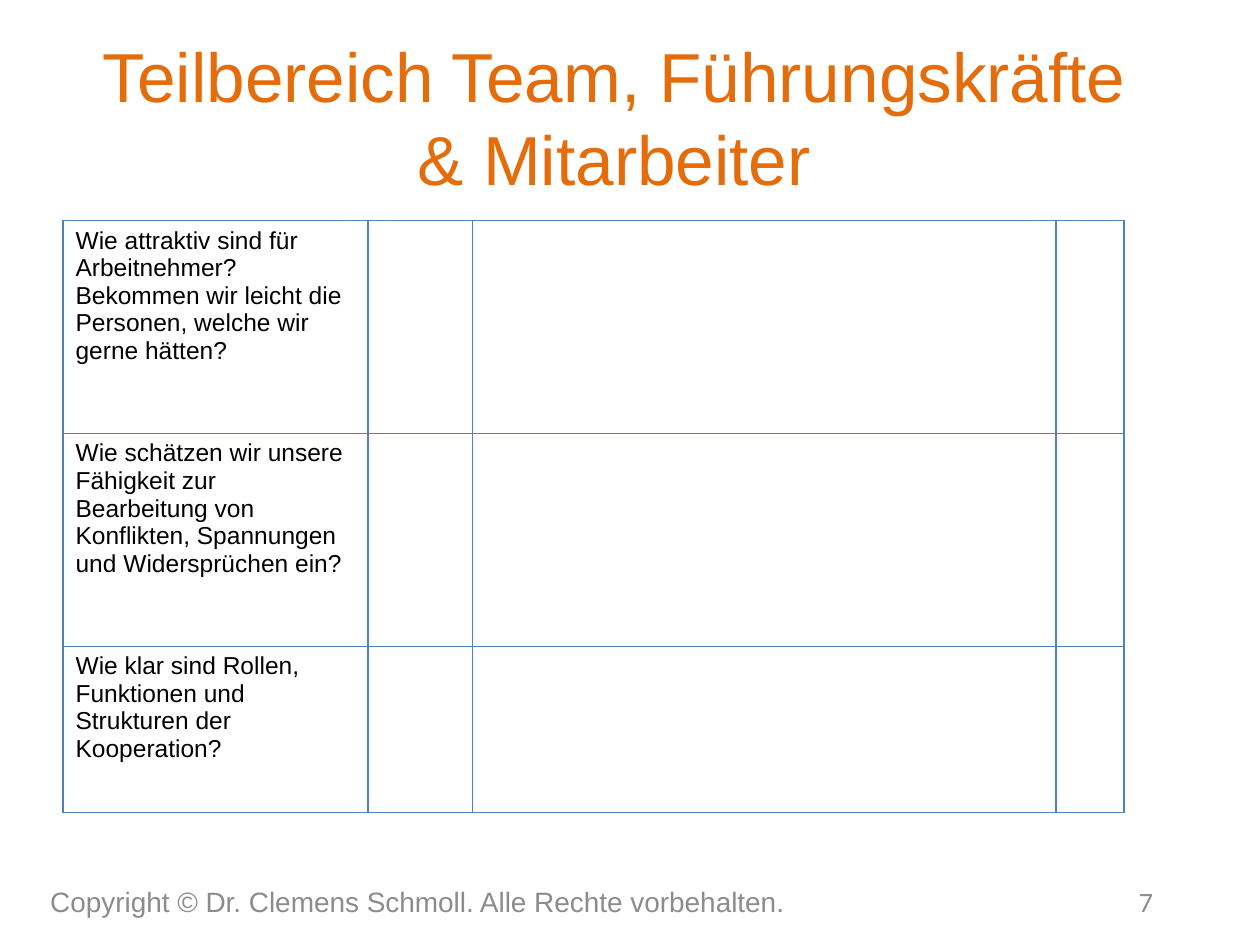
from lxml import etree
from pptx import Presentation
from pptx.dml.color import RGBColor
from pptx.enum.text import MSO_ANCHOR, PP_ALIGN
from pptx.oxml.ns import qn
from pptx.util import Inches, Pt

LEFT, CENTER, RIGHT = PP_ALIGN.LEFT, PP_ALIGN.CENTER, PP_ALIGN.RIGHT
MIDDLE = MSO_ANCHOR.MIDDLE
TITLE_ONLY = 5

COLORS = {"title": "E46C0A", "text": "000000", "footer": "8C8C8C", "border": "4F81BD"}
COLUMN_WIDTHS = [2.42, 0.83, 4.63, 0.54]
ROW_HEIGHTS = [1.69, 1.69, 1.32]
QUESTIONS = [
    "Wie attraktiv sind für Arbeitnehmer? Bekommen wir leicht die Personen, welche wir gerne hätten?",
    "Wie schätzen wir unsere Fähigkeit zur Bearbeitung von Konflikten, Spannungen und Widersprüchen ein?",
    "Wie klar sind Rollen, Funktionen und Strukturen der Kooperation?",
]


def set_text(text_frame, text, size, color, font_name="Arial", alignment=LEFT):
    text_frame.text = text
    text_frame.word_wrap = True
    paragraph = text_frame.paragraphs[0]
    paragraph.alignment = alignment
    font = paragraph.runs[0].font
    font.name = font_name
    font.size = Pt(size)
    font.color.rgb = RGBColor.from_string(COLORS[color])


def add_title(slide, text):
    title = slide.shapes.title
    title.left, title.top = Inches(0.5), Inches(0.3)
    title.width, title.height = Inches(8.75), Inches(1.25)
    set_text(title.text_frame, text, 39.6, "title", alignment=CENTER)
    title.text_frame.vertical_anchor = MIDDLE


def add_footer(slide, text, left, width, font_name, alignment):
    shape = slide.shapes.add_textbox(Inches(left), Inches(6.95), Inches(width), Inches(0.4))
    set_text(shape.text_frame, text, 16, "footer", font_name, alignment)
    shape.text_frame.vertical_anchor = MIDDLE


def set_borders(cell):
    properties = cell._tc.get_or_add_tcPr()
    for position, side in enumerate(("a:lnL", "a:lnR", "a:lnT", "a:lnB")):
        line = etree.Element(qn(side), w=str(Pt(1)))
        fill = etree.SubElement(line, qn("a:solidFill"))
        etree.SubElement(fill, qn("a:srgbClr"), val=COLORS["border"])
        properties.insert(position, line)


def add_question_table(slide):
    frame = slide.shapes.add_table(
        len(ROW_HEIGHTS), len(COLUMN_WIDTHS), Inches(0.5), Inches(1.75),
        Inches(sum(COLUMN_WIDTHS)), Inches(sum(ROW_HEIGHTS)),
    )
    table = frame.table
    table.first_row = False
    table.horz_banding = False
    for column, width in zip(table.columns, COLUMN_WIDTHS):
        column.width = Inches(width)
    for row, height, question in zip(table.rows, ROW_HEIGHTS, QUESTIONS):
        row.height = Inches(height)
        for cell in row.cells:
            cell.fill.background()
            set_borders(cell)
        set_text(row.cells[0].text_frame, question, 14, "text")


def main():
    presentation = Presentation()
    presentation.slide_width = Inches(10)
    presentation.slide_height = Inches(7.5)
    slide = presentation.slides.add_slide(presentation.slide_layouts[TITLE_ONLY])
    add_title(slide, "Teilbereich Team, Führungskräfte & Mitarbeiter")
    add_footer(slide, "7", 6.92, 2.33, "Calibri", RIGHT)
    add_question_table(slide)
    add_footer(
        slide, "Copyright © Dr. Clemens Schmoll. Alle Rechte vorbehalten.",
        0.3, 6.36, "Arial", LEFT,
    )
    presentation.save("out.pptx")


if __name__ == "__main__":
    main()
